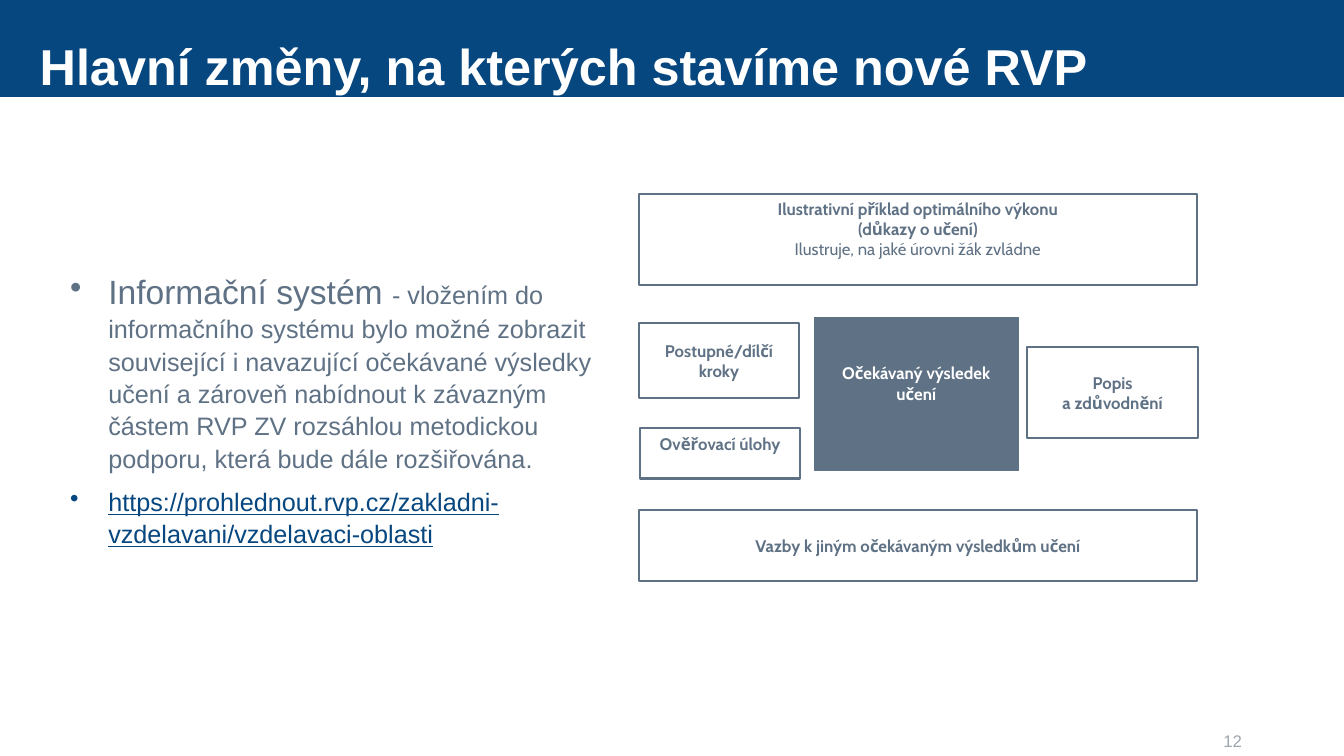
import pptx
import pptx.dml.color
import pptx.enum.shapes
import pptx.enum.text
import pptx.oxml.ns
import pptx.util
from lxml import etree

Cm = pptx.util.Cm
Pt = pptx.util.Pt
Align = pptx.enum.text.PP_ALIGN
Anchor = pptx.enum.text.MSO_ANCHOR

NAVY, SLATE, GREY, WHITE = "07477F", "5F7184", "9DA5AE", "FFFFFF"


def color(hex_code):
    return pptx.dml.color.RGBColor.from_string(hex_code)


class SlideBuilder:
    heading_font = "Arial"
    diagram_font = "Cabin"

    def __init__(self, deck):
        self.page = deck.slides.add_slide(deck.slide_layouts[6])

    def span(self, para, text, size, ink, font=heading_font, bold=False, underline=False):
        run = para.add_run()
        run.text = text
        run.font.name = font
        run.font.size = Pt(size)
        run.font.bold = bold
        run.font.underline = underline
        run.font.color.rgb = color(ink)

    def frame(self, box, anchor, insets=(0.25, 0.13, 0.25, 0.13)):
        """Set wrapping, anchor and insets (left, top, right, bottom)."""
        frame = box.text_frame
        frame.word_wrap = True
        frame.vertical_anchor = anchor
        (frame.margin_left, frame.margin_top,
         frame.margin_right, frame.margin_bottom) = map(Cm, insets)
        return frame

    def rectangle(self, place, fill=None, line=None, width=1.5):
        box = self.page.shapes.add_shape(
            pptx.enum.shapes.MSO_SHAPE.RECTANGLE, *map(Cm, place))
        box.shadow.inherit = False
        if fill:
            box.fill.solid()
            box.fill.fore_color.rgb = color(fill)
        else:
            box.fill.background()
        if line:
            box.line.color.rgb = color(line)
            box.line.width = Pt(width)
        else:
            box.line.fill.background()
        return box

    def title(self, text):
        bar = self.rectangle((0, 0, 33.87, 2.44), fill=NAVY)
        para = self.frame(bar, Anchor.BOTTOM, (1, 0, 1, 0)).paragraphs[0]
        para.alignment = Align.LEFT
        para.line_spacing = 0.9
        self.span(para, text, 36, WHITE, bold=True)

    def text_box(self, place, anchor, **options):
        box = self.page.shapes.add_textbox(*map(Cm, place))
        return self.frame(box, anchor, **options)

    def bullet(self, para):
        para.line_spacing = 1.07
        para.space_after = Pt(8)
        properties = para._p.get_or_add_pPr()
        properties.set("marL", str(Cm(0.96)))
        properties.set("indent", str(-Cm(0.96)))
        mark = etree.SubElement(properties, pptx.oxml.ns.qn("a:buChar"))
        mark.set("char", "•")

    def diagram_box(self, place, lines, anchor=Anchor.MIDDLE, top=0.13,
                    fill=None, ink=SLATE, width=1.5):
        """Draw a framed box; lines are (text, bold) pairs."""
        box = self.rectangle(place, fill, SLATE, width)
        frame = self.frame(box, anchor, (0.25, top, 0.25, 0.13))
        for index, (text, bold) in enumerate(lines):
            para = frame.add_paragraph() if index else frame.paragraphs[0]
            para.alignment = Align.CENTER
            self.span(para, text, 12, ink, self.diagram_font, bold)


def main():
    deck = pptx.Presentation()
    deck.slide_width, deck.slide_height = Cm(33.87), Cm(19.05)
    slide = SlideBuilder(deck)

    slide.title("Hlavní změny, na kterých stavíme nové RVP")

    body = slide.text_box((1.52, 3.99, 14.25, 14.2), Anchor.TOP,
                          insets=(0.25, 2.77, 0.25, 0.13))
    system = body.paragraphs[0]
    slide.bullet(system)
    slide.span(system, "Informační systém ", 24, SLATE)
    slide.span(system, "- vložením do informačního systému bylo možné zobrazit "
               "související i navazující očekávané výsledky učení a zároveň "
               "nabídnout k závazným částem RVP ZV rozsáhlou metodickou podporu, "
               "která bude dále rozšiřována.", 18, SLATE)
    address = body.add_paragraph()
    slide.bullet(address)
    slide.span(address, "https://prohlednout.rvp.cz/zakladni-vzdelavani/vzdelavaci-oblasti",
               18, NAVY, underline=True)

    left, full, narrow = 16.1, 14.07, 4.04
    slide.diagram_box((left, 8.15, narrow, 1.88), [("Postupné/dílčí kroky", True)])
    slide.diagram_box((20.52, 8.01, 5.14, 3.84),
                      [("Očekávaný výsledek", True), ("učení", True)],
                      Anchor.TOP, top=1.14, fill=SLATE, ink=WHITE, width=0.75)
    slide.diagram_box((left, 4.88, full, 2.31),
                      [("Ilustrativní příklad optimálního výkonu", True),
                       ("(důkazy o učení)", True),
                       ("Ilustruje, na jaké úrovni žák zvládne", False)], Anchor.TOP)
    slide.diagram_box((left, 12.85, full, 1.8),
                      [("Vazby k jiným očekávaným výsledkům učení", True)])
    slide.diagram_box((25.88, 8.74, 4.32, 2.31),
                      [("Popis", True), ("a zdůvodnění", True)])
    slide.diagram_box((left + 0.03, 10.79, narrow, 1.27),
                      [("Ověřovací úlohy", True)], Anchor.TOP)

    number = slide.text_box((23.93, 18.31, 7.62, 0.74), Anchor.MIDDLE).paragraphs[0]
    number.alignment = Align.RIGHT
    slide.span(number, "12", 12, GREY)

    deck.save("out.pptx")


if __name__ == "__main__":
    main()
